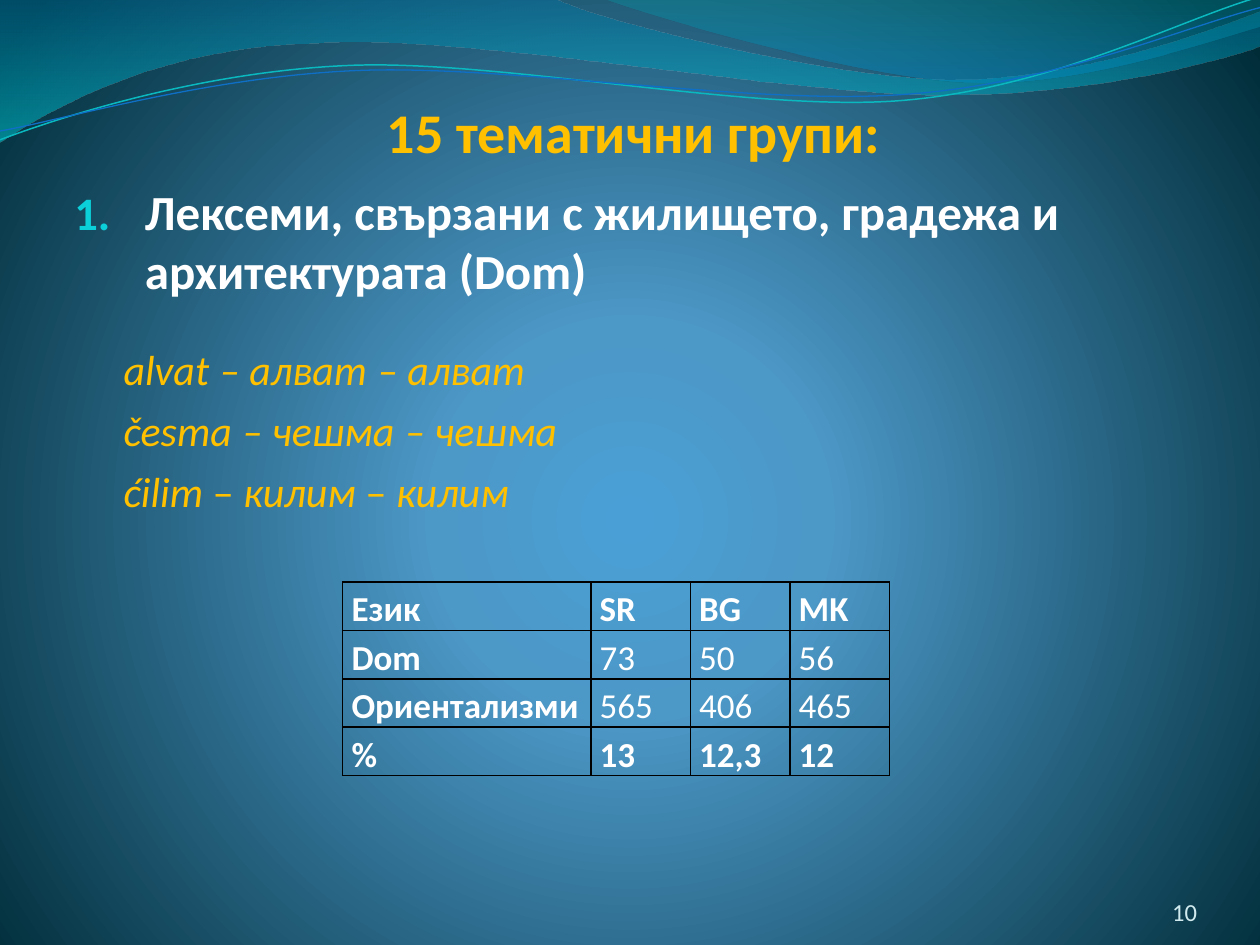
import math

from lxml import etree
from pptx import Presentation
from pptx.dml.color import RGBColor
from pptx.enum.text import MSO_ANCHOR, PP_ALIGN
from pptx.oxml.ns import qn
from pptx.util import Inches, Pt

LEFT, CENTER, RIGHT = PP_ALIGN.LEFT, PP_ALIGN.CENTER, PP_ALIGN.RIGHT
TOP, BOTTOM = MSO_ANCHOR.TOP, MSO_ANCHOR.BOTTOM
FONT = "Calibri"
LINE_TILT = -2.7
COLORS = {
    "white": "FFFFFF", "gold": "FFC000", "number": "0BD0D9",
    "page": "D1EAEE", "border": "000000",
    "glow": "4AA0D6", "sky": "4C98C7", "deep": "002C38",
    "ocean": "0074A1", "aqua": "00C6CF", "teal": "00A1A9", "azure": "008BBF",
    "cyan line": "0AB8BF", "blue line": "0F6FC6",
}
FILLED_WAVES = [
    ((-0.01, -0.01, 10.02, 1.14),
     [[(0, 0)],
      [(4.4, -0.01)],
      [(4.76, 0.17), (6.64, 0.63), (7.58, 0.63)],
      [(8.53, 0.63), (9.58, 0.26), (10, 0.09)],
      [(10.01, 0.36)],
      [(9.83, 0.44), (8.7, 0.76), (7.46, 0.75)],
      [(6.22, 0.75), (3.82, 0.28), (2.57, 0.34)],
      [(1.29, 0.36), (0.46, 0.83), (-0.01, 1.13)],
      [(0, 0)]],
     [(0, "ocean", 45), (100, "aqua", 55)]),
    ((4.79, -0.01, 5.21, 0.7),
     [[(4.79, -0.01)],
      [(5.09, 0.11), (6.82, 0.62), (7.69, 0.65)],
      [(8.56, 0.69), (9.61, 0.32), (10, 0.21)],
      [(10, 0)],
      [(4.79, -0.01)]],
     [(0, "teal", 30), (80, "azure", 45)]),
]
LINE_WAVES = [
    ((-0.02, 0.22, 10.02, 0.71),
     [[(0, 1.11)],
      [(0.48, 0.93), (1.58, 0.57), (2.77, 0.52)],
      [(3.95, 0.47), (5.93, 0.89), (7.13, 0.8)],
      [(8.33, 0.71), (9.38, 0.15), (9.98, -0.02)]],
     "cyan line", 0.85),
    ((-0.02, 0.3, 10.03, 0.58),
     [[(0, 1.04)],
      [(0.47, 0.96), (1.64, 0.61), (2.83, 0.56)],
      [(4.03, 0.51), (5.97, 0.84), (7.17, 0.75)],
      [(8.36, 0.67), (9.41, 0.21), (10, 0.06)]],
     "blue line", 0.75),
]
WORDS = [
    [("alvat ‒ алват ‒ алват", True)],
    [("česma ‒ чешма ‒ чешма", True)],
    [("ćilim ", True), ("‒ ", False), ("килим ", True), ("‒ ", False), ("килим", True)],
]
ROWS = [
    ["Език", "SR", "BG", "MK"],
    ["Dom", "73", "50", "56"],
    ["Ориентализми", "565", "406", "465"],
    ["%", "13", "12,3", "12"],
]


def add_element(parent, tag, **attributes):
    values = {name: str(value) for name, value in attributes.items()}
    return etree.SubElement(parent, qn(tag), values)


def set_gradient(fill, owner, stops, circular=False):
    fill.gradient()
    gradient = next(owner.iter(qn("a:gradFill")))
    for child in list(gradient):
        gradient.remove(child)
    stop_list = add_element(gradient, "a:gsLst")
    for position, color, opacity in stops:
        stop = add_element(stop_list, "a:gs", pos=position * 1000)
        tone = add_element(stop, "a:srgbClr", val=COLORS[color])
        if opacity < 100:
            add_element(tone, "a:alpha", val=opacity * 1000)
    if circular:
        circle = add_element(gradient, "a:path", path="circle")
        add_element(circle, "a:fillToRect", l=10000, t=110000, r=10000, b=100000)
    else:
        add_element(gradient, "a:lin", ang=5400000, scaled=1)


def add_text(paragraph, text, size=24, color="white", bold=False, italic=False):
    run = paragraph.add_run()
    run.text = text
    font = run.font
    font.name, font.size, font.bold, font.italic = FONT, Pt(size), bold, italic
    font.color.rgb = RGBColor.from_string(COLORS[color])


def place(shape, box):
    shape.left, shape.top, shape.width, shape.height = (Inches(value) for value in box)


def format_frame(frame, anchor, left=0, top=0, right=0, bottom=0):
    frame.word_wrap = True
    frame.vertical_anchor = anchor
    frame.margin_left, frame.margin_right = Inches(left), Inches(right)
    frame.margin_top, frame.margin_bottom = Inches(top), Inches(bottom)


def add_wave(slide, box, segments, tilt=0, closed=False):
    left, top, width, height = box
    builder = slide.shapes.build_freeform(Inches(left), Inches(top))
    builder.add_line_segments([(Inches(left + width), Inches(top + height))], close=False)
    shape = builder.convert_to_shape()
    shape.shadow.inherit = False
    shape.rotation = tilt
    outline = next(shape.element.iter(qn("a:path")))
    for child in list(outline):
        outline.remove(child)
    cosine, sine = math.cos(math.radians(tilt)), math.sin(math.radians(tilt))
    for index, segment in enumerate(segments):
        tag = "a:cubicBezTo" if len(segment) == 3 else "a:lnTo" if index else "a:moveTo"
        command = add_element(outline, tag)
        for x, y in segment:
            across, down = x - left - width / 2, y - top - height / 2
            add_element(command, "a:pt",
                        x=Inches(width / 2 + across * cosine + down * sine),
                        y=Inches(height / 2 - across * sine + down * cosine))
    if closed:
        add_element(outline, "a:close")
    return shape


def add_background(slide):
    stops = [(0, "glow", 100), (25, "sky", 100), (100, "deep", 100)]
    set_gradient(slide.background.fill, slide.element, stops, circular=True)
    for box, segments, stops in FILLED_WAVES:
        wave = add_wave(slide, box, segments, closed=True)
        set_gradient(wave.fill, wave.element, stops)
        wave.line.fill.background()
    for box, segments, color, width in LINE_WAVES:
        wave = add_wave(slide, box, segments, tilt=LINE_TILT)
        wave.fill.background()
        wave.line.color.rgb = RGBColor.from_string(COLORS[color])
        wave.line.width = Pt(width)


def add_title(slide, box):
    title = slide.shapes.title
    slide.shapes.element.append(title.element)
    place(title, box)
    format_frame(title.text_frame, BOTTOM, right=0.02)
    paragraph = title.text_frame.paragraphs[0]
    paragraph.alignment = CENTER
    add_text(paragraph, "15 тематични групи:", size=32, color="gold", bold=True)


def add_body(slide, box):
    body = slide.placeholders[1]
    slide.shapes.element.append(body.element)
    place(body, box)
    frame = body.text_frame
    format_frame(frame, TOP, top=0.05, right=0.02, bottom=0.05)
    heading = frame.paragraphs[0]
    heading.alignment = LEFT
    add_text(heading, "Лексеми, свързани с жилището, градежа и архитектурата (Dom)",
             size=28, bold=True)
    properties = heading._p.get_or_add_pPr()
    properties.set("marL", str(Inches(0.56)))
    properties.set("indent", str(Inches(-0.56)))
    add_element(add_element(properties, "a:buClr"), "a:srgbClr", val=COLORS["number"])
    add_element(properties, "a:buSzPct", val=95000)
    add_element(properties, "a:buFont", typeface=FONT)
    add_element(properties, "a:buAutoNum", type="arabicPeriod")
    for index, parts in enumerate(WORDS):
        paragraph = frame.add_paragraph()
        paragraph.alignment = LEFT
        paragraph.space_before = Pt(6 if index else 25.5)
        paragraph._p.get_or_add_pPr().set("marL", str(Inches(0.39)))
        for text, italic in parts:
            add_text(paragraph, text, color="gold", italic=italic)


def add_borders(cell):
    properties = cell._tc.get_or_add_tcPr()
    for side in ("a:lnL", "a:lnR", "a:lnT", "a:lnB"):
        line = add_element(properties, side, w=Pt(1))
        add_element(add_element(line, "a:solidFill"), "a:srgbClr", val=COLORS["border"])


def add_language_table(slide, box):
    frame = slide.shapes.add_table(len(ROWS), len(ROWS[0]), *(Inches(value) for value in box))
    table = frame.table
    table.first_row = table.horz_banding = False
    for index, column in enumerate(table.columns):
        column.width = Inches(0.79 if index else 1.97)
    for row_index, row in enumerate(ROWS):
        table.rows[row_index].height = Inches(0.22)
        for column_index, text in enumerate(row):
            cell = table.cell(row_index, column_index)
            cell.margin_left = cell.margin_right = Inches(0.07)
            cell.margin_top = cell.margin_bottom = 0
            add_borders(cell)
            cell.fill.background()
            paragraph = cell.text_frame.paragraphs[0]
            paragraph.line_spacing = 1.15
            bold = column_index == 0 or row_index in (0, len(ROWS) - 1)
            add_text(paragraph, text, size=20, bold=bold)
    place(frame, box)


def add_page_number(slide, box):
    shape = slide.shapes.add_textbox(*(Inches(value) for value in box))
    format_frame(shape.text_frame, BOTTOM)
    paragraph = shape.text_frame.paragraphs[0]
    paragraph.alignment = RIGHT
    add_text(paragraph, "10", size=14, color="page")


def main():
    presentation = Presentation()
    presentation.slide_width, presentation.slide_height = Inches(10), Inches(7.5)
    slide = presentation.slides.add_slide(presentation.slide_layouts[0])
    add_background(slide)
    add_title(slide, (0.59, 0.68, 8.9, 0.63))
    add_body(slide, (0.59, 1.39, 8.91, 5.67))
    add_page_number(slide, (8.67, 6.95, 0.83, 0.4))
    add_language_table(slide, (2.72, 4.62, 4.33, 1.53))
    presentation.save("out.pptx")


if __name__ == "__main__":
    main()
